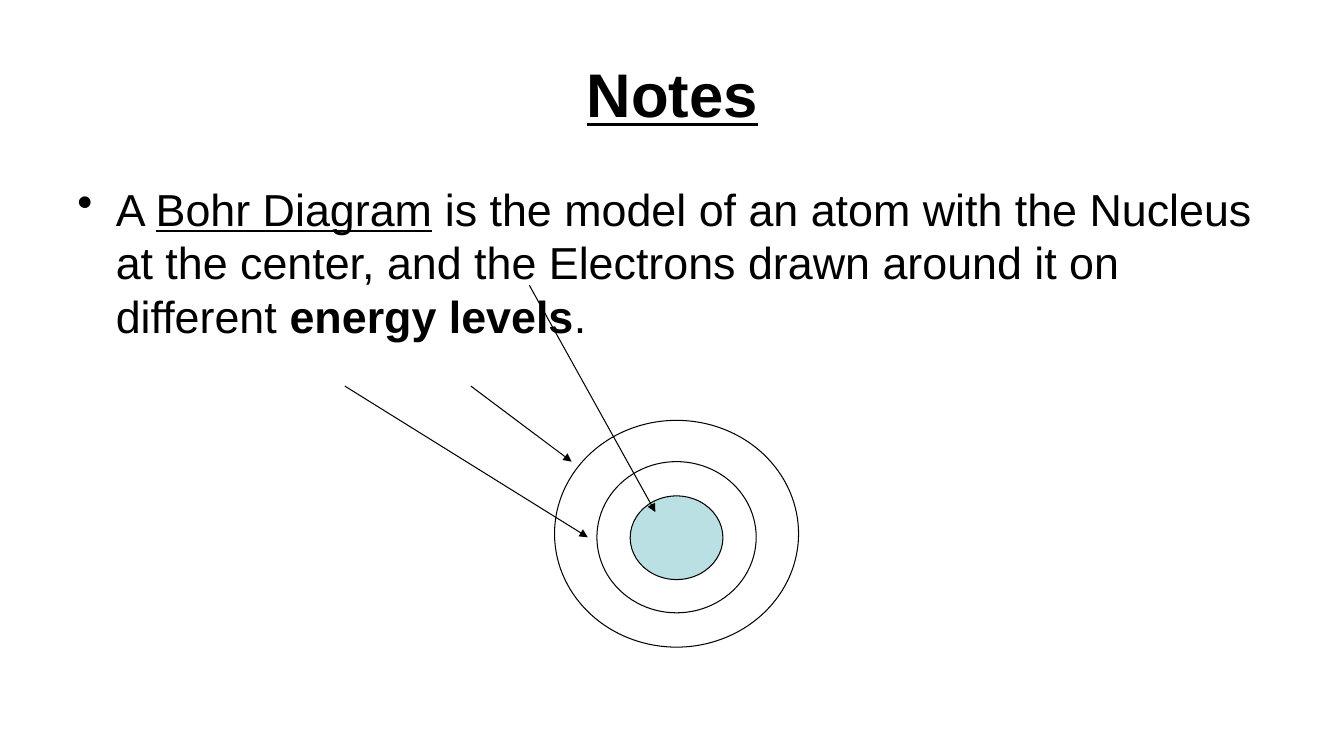
"""Build a slide of notes on the Bohr diagram."""
from dataclasses import dataclass
from typing import Optional

import lxml.etree
import pptx
import pptx.dml.color
import pptx.enum.shapes
import pptx.enum.text
import pptx.oxml.ns
import pptx.shapes.base
import pptx.slide
import pptx.text.text
import pptx.util

Inches = pptx.util.Inches
Pt = pptx.util.Pt
RGB = pptx.dml.color.RGBColor
qn = pptx.oxml.ns.qn


@dataclass(frozen=True)
class Theme:
    font: str = "Arial"
    ink: RGB = RGB(0x00, 0x00, 0x00)
    nucleus: RGB = RGB(0xBB, 0xE0, 0xE3)
    title_size: float = 44
    body_size: float = 32
    line_width: float = 0.75


@dataclass(frozen=True)
class Span:
    text: str
    bold: Optional[bool] = None
    underline: Optional[bool] = None


@dataclass(frozen=True)
class Ring:
    left: float
    top: float
    width: float
    height: float
    fill: Optional[RGB] = None


@dataclass(frozen=True)
class Arrow:
    x1: float
    y1: float
    x2: float
    y2: float


THEME = Theme()

TITLE = [Span("Notes", bold=True, underline=True)]
DEFINITION = [
    Span("A "),
    Span("Bohr Diagram", underline=True),
    Span(" is the model of an atom with the Nucleus at the center, "
         "and the Electrons drawn around it on different "),
    Span("energy levels", bold=True),
    Span("."),
]
RINGS = [
    Ring(6.25, 4.92, 0.92, 0.83, THEME.nucleus),
    Ring(5.5, 4.17, 2.42, 2.25),
    Ring(5.92, 4.58, 1.58, 1.5),
]
ARROWS = [
    Arrow(5.25, 2.83, 6.5, 5.08),
    Arrow(3.42, 3.83, 5.83, 5.33),
    Arrow(4.67, 3.83, 5.67, 4.58),
]


def add_text(s: pptx.slide.Slide, top: float, height: float, size: float,
             spans: list[Span],
             anchor: pptx.enum.text.MSO_ANCHOR) -> pptx.text.text._Paragraph:
    """Add a full-width text box and return its paragraph."""
    tf = s.shapes.add_textbox(Inches(0.67), Inches(top),
                              Inches(12), Inches(height)).text_frame
    tf.word_wrap = True
    tf.vertical_anchor = anchor
    p = tf.paragraphs[0]
    p.font.name = THEME.font
    p.font.size = Pt(size)
    p.font.color.rgb = THEME.ink
    for span in spans:
        r = p.add_run()
        r.text = span.text
        r.font.bold = span.bold
        r.font.underline = span.underline
    return p


def add_bullet(p: pptx.text.text._Paragraph) -> None:
    """Give a paragraph a hanging round bullet."""
    p.space_before = Pt(0.2 * THEME.body_size)
    pPr = p._p.get_or_add_pPr()
    pPr.set("marL", str(Inches(0.38)))
    pPr.set("indent", str(Inches(-0.38)))
    bullet = pPr.makeelement(qn("a:buChar"), {"char": "•"})
    pPr.find(qn("a:defRPr")).addprevious(bullet)


def style_line(sp: pptx.shapes.base.BaseShape) -> None:
    """Apply the thin outline shared by rings and arrows."""
    sp.line.color.rgb = THEME.ink
    sp.line.width = Pt(THEME.line_width)


def add_ring(s: pptx.slide.Slide, ring: Ring) -> None:
    """Draw the nucleus or an energy level."""
    sp = s.shapes.add_shape(pptx.enum.shapes.MSO_SHAPE.OVAL,
                            Inches(ring.left), Inches(ring.top),
                            Inches(ring.width), Inches(ring.height))
    sp.shadow.inherit = False
    if ring.fill is None:
        sp.fill.background()
    else:
        sp.fill.solid()
        sp.fill.fore_color.rgb = ring.fill
    style_line(sp)


def add_arrow(s: pptx.slide.Slide, arrow: Arrow) -> None:
    """Draw a straight line ending in a triangular head."""
    sp = s.shapes.add_connector(pptx.enum.shapes.MSO_CONNECTOR.STRAIGHT,
                                Inches(arrow.x1), Inches(arrow.y1),
                                Inches(arrow.x2), Inches(arrow.y2))
    style_line(sp)
    lxml.etree.SubElement(sp.line._get_or_add_ln(), qn("a:tailEnd"),
                          {"type": "triangle"})
    lxml.etree.SubElement(sp._element.spPr, qn("a:effectLst"))


def main() -> None:
    """Build and save the slide."""
    prs = pptx.Presentation()
    prs.slide_width = Inches(13.33)
    prs.slide_height = Inches(7.5)
    s = prs.slides.add_slide(prs.slide_layouts[6])

    p = add_text(s, 0.3, 1.25, THEME.title_size, TITLE,
                 pptx.enum.text.MSO_ANCHOR.MIDDLE)
    p.alignment = pptx.enum.text.PP_ALIGN.CENTER
    p = add_text(s, 1.75, 4.95, THEME.body_size, DEFINITION,
                 pptx.enum.text.MSO_ANCHOR.TOP)
    add_bullet(p)

    for ring in RINGS:
        add_ring(s, ring)
    for arrow in ARROWS:
        add_arrow(s, arrow)
    prs.save("out.pptx")


if __name__ == "__main__":
    main()
